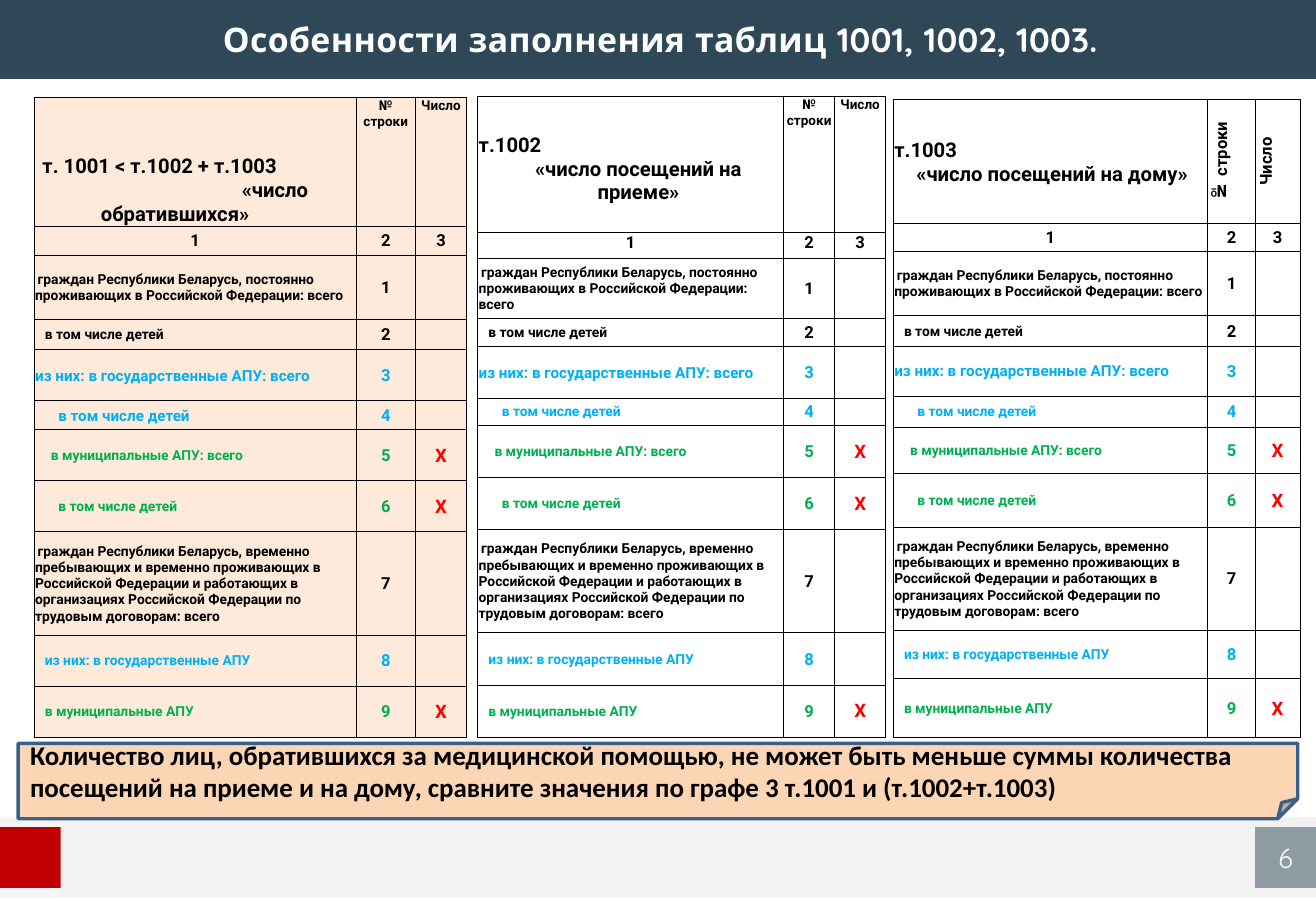
from lxml import etree
from pptx import Presentation, util as u
from pptx.dml.color import RGBColor
from pptx.enum import shapes, text
from pptx.oxml import ns

TITLE = "Особенности заполнения таблиц 1001, 1002, 1003."
NOTE = ("Количество лиц, обратившихся за медицинской помощью, не может быть меньше суммы "
        "количества посещений на приеме и на дому, сравните значения по графе 3 т.1001 "
        "и (т.1002+т.1003)")
PAGE_NUMBER = "6"
BLACK, WHITE, RED, BLUE, GREEN = "000000", "FFFFFF", "FF0000", "00B0F0", "00B050"
NAVY, PEACH = "2F4858", "FDEADA"

# label, left margin, first-line indent, colour, size, mark in the third column
ROWS = [
    ("граждан Республики Беларусь, постоянно проживающих в Российской Федерации: всего",
     0, 0.02, BLACK, 8.2, ""),
    ("в том числе детей", 0.08, 0, BLACK, 8.2, ""),
    ("из них: в государственные АПУ: всего", 0, 0, BLUE, 9, ""),
    ("в том числе детей", 0.19, 0, BLUE, 8.2, ""),
    ("в муниципальные АПУ: всего", 0.13, 0, GREEN, 8.2, "Х"),
    ("в том числе детей", 0.19, 0, GREEN, 8.2, "Х"),
    ("граждан Республики Беларусь, временно пребывающих и временно проживающих в "
     "Российской Федерации и работающих в организациях Российской Федерации по трудовым "
     "договорам: всего", 0, 0.02, BLACK, 8.2, ""),
    ("из них: в государственные АПУ", 0.08, 0, BLUE, 8.2, ""),
    ("в муниципальные АПУ", 0.08, 0, GREEN, 8.2, "Х"),
]

# headings: text, alignment, left margin, first-line indent
TABLES = [
    dict(left=0.28, top=0.8, fill=PEACH, columns=[2.65, 0.49, 0.42],
         heights=[1.06, 0.24, 0.53, 0.25, 0.42, 0.24, 0.42, 0.42, 0.85, 0.42, 0.42],
         headings=[("т. 1001 < т.1002 + т.1003", "l", 0.06, 0),
                   ("«число обратившихся»", "l", 0.54, 1.16)],
         anchor="b", margin_top=0.01, numbers_anchor="m", vertical=False, child_size=9),
    dict(left=3.93, top=0.79, fill=None, columns=[2.52, 0.42, 0.42],
         heights=[1.12, 0.22, 0.49, 0.23, 0.43, 0.22, 0.43, 0.43, 0.85, 0.43, 0.43],
         headings=[("т.1002", "l", 0, 0), ("«число посещений на приеме»", "c", 0.13, 0)],
         anchor="t", margin_top=0.31, numbers_anchor="t", vertical=False, child_size=8.2),
    dict(left=7.35, top=0.82, fill=None, columns=[2.59, 0.39, 0.37],
         heights=[1.02, 0.23, 0.53, 0.25, 0.41, 0.26, 0.38, 0.44, 0.85, 0.4, 0.48],
         headings=[("т.1003", "l", 0, 0), ("«число посещений на дому»", "c", 0.03, 0)],
         anchor="m", margin_top=0.01, numbers_anchor="m", vertical=True, child_size=8.2),
]
ALIGN = {"l": text.PP_ALIGN.LEFT, "c": text.PP_ALIGN.CENTER}
ANCHOR = {"t": text.MSO_ANCHOR.TOP, "m": text.MSO_ANCHOR.MIDDLE, "b": text.MSO_ANCHOR.BOTTOM}


def color(value):
    return RGBColor.from_string(value)


def write(paragraph, content, size=9.8, font="Roboto", fill=BLACK, bold=True, align="l",
          margin=0, indent=0, spacing=None):
    paragraph.alignment = ALIGN[align]
    properties = paragraph._p.get_or_add_pPr()
    properties.set("marL", str(u.Inches(margin)))
    properties.set("indent", str(u.Inches(indent)))
    run = paragraph.add_run()
    run.text = content
    run.font.size = u.Pt(size)
    run.font.name = font
    run.font.bold = bold
    run.font.color.rgb = color(fill)
    if spacing:
        run.font._element.set("spc", str(spacing))


def add_box(slide, kind, left, top, width, height, fill, line=None, opacity=100):
    shape = slide.shapes.add_shape(kind, *map(u.Inches, (left, top, width, height)))
    shape.shadow.inherit = False
    shape.fill.solid()
    shape.fill.fore_color.rgb = color(fill)
    if opacity < 100:
        solid = shape.element.spPr.find(ns.qn("a:solidFill"))
        etree.SubElement(solid[0], ns.qn("a:alpha"), val=str(opacity * 1000))
    if line:
        shape.line.color.rgb = color(line)
        shape.line.width = u.Pt(2)
    else:
        shape.line.fill.background()
    shape.text_frame.word_wrap = True
    shape.text_frame.vertical_anchor = ANCHOR["m"]
    return shape


def format_cell(cell, fill, anchor="m", margin_top=0.01):
    """Set margins, thin black borders and background of a cell."""
    cell.margin_left = cell.margin_right = u.Inches(0.01)
    cell.margin_top, cell.margin_bottom = u.Inches(margin_top), 0
    cell.vertical_anchor = ANCHOR[anchor]
    properties = cell._tc.get_or_add_tcPr()
    for side in ("lnL", "lnR", "lnT", "lnB"):
        border = etree.SubElement(properties, ns.qn("a:" + side), w=str(u.Pt(0.5)))
        solid = etree.SubElement(border, ns.qn("a:solidFill"))
        etree.SubElement(solid, ns.qn("a:srgbClr"), val=BLACK)
    if fill:
        cell.fill.solid()
        cell.fill.fore_color.rgb = color(fill)
    else:
        cell.fill.background()


def add_form(slide, form):
    """Draw one statistical form: heading row, column numbers, then ROWS."""
    columns, heights = form["columns"], form["heights"]
    frame = slide.shapes.add_table(
        len(heights), len(columns), u.Inches(form["left"]), u.Inches(form["top"]),
        u.Inches(sum(columns)), u.Inches(sum(heights)))
    table = frame.table
    table.first_row = table.horz_banding = False
    for column, width in zip(table.columns, columns):
        column.width = u.Inches(width)
    for row, height in zip(table.rows, heights):
        row.height = u.Inches(height)

    heading = table.cell(0, 0)
    format_cell(heading, form["fill"], form["anchor"], form["margin_top"])
    for index, (content, align, margin, indent) in enumerate(form["headings"]):
        frame_text = heading.text_frame
        paragraph = frame_text.add_paragraph() if index else frame_text.paragraphs[0]
        write(paragraph, content, size=12, align=align, margin=margin, indent=indent)

    vertical = form["vertical"]
    for index, content in enumerate(("№ строки", "Число"), 1):
        cell = table.cell(0, index)
        format_cell(cell, form["fill"], "m" if vertical else "t")
        if vertical:
            cell._tc.get_or_add_tcPr().set("vert", "vert270")
        write(cell.text_frame.paragraphs[0], content, size=9.8 if vertical else 8, align="c")

    for index in range(3):
        cell = table.cell(1, index)
        format_cell(cell, form["fill"], form["numbers_anchor"])
        write(cell.text_frame.paragraphs[0], str(index + 1), align="c")

    for number, (label, margin, indent, ink, size, mark) in enumerate(ROWS, 1):
        cells = [table.cell(number + 1, index) for index in range(3)]
        for cell in cells:
            format_cell(cell, form["fill"])
        label_line, number_line, mark_line = [cell.text_frame.paragraphs[0] for cell in cells]
        if number == 4:
            size = form["child_size"]
        write(label_line, label, size=size, fill=ink, margin=margin, indent=indent)
        write(number_line, str(number), fill=ink, align="c")
        if mark:
            write(mark_line, mark, size=11, fill=RED, align="c")
        else:
            etree.SubElement(mark_line._p, ns.qn("a:endParaRPr"), sz="800")


def main():
    presentation = Presentation()
    presentation.slide_width, presentation.slide_height = u.Inches(10.83), u.Inches(7.5)
    slide = presentation.slides.add_slide(presentation.slide_layouts[5])
    rectangle = shapes.MSO_SHAPE.RECTANGLE

    add_box(slide, rectangle, 0, 6.73, 10.83, 0.66, "F2F2F2")
    add_box(slide, rectangle, 0, 0, 10.83, 0.65, NAVY)
    add_box(slide, rectangle, 0, 6.73, 0.5, 0.66, WHITE, opacity=30)
    add_box(slide, rectangle, 0, 6.81, 0.5, 0.5, "C00000")
    page = add_box(slide, rectangle, 10.33, 6.81, 0.5, 0.5, NAVY, opacity=50)
    write(page.text_frame.paragraphs[0], PAGE_NUMBER, size=16, font="Quicksand",
          fill=WHITE, bold=False, align="c")

    title = slide.shapes.title
    page.element.addnext(title.element)
    title.left, title.top = u.Inches(0.65), 0
    title.width, title.height = u.Inches(9.57), u.Inches(0.65)
    frame = title.text_frame
    frame.margin_left = frame.margin_right = frame.margin_top = frame.margin_bottom = 0
    frame.vertical_anchor = ANCHOR["m"]
    frame.auto_size = text.MSO_AUTO_SIZE.NONE
    write(frame.paragraphs[0], TITLE, size=20, font="Quicksand", fill=WHITE, align="c",
          spacing=20)

    for form in TABLES:
        add_form(slide, form)

    note = add_box(slide, shapes.MSO_SHAPE.FOLDED_CORNER, 0.15, 6.12, 10.53, 0.62,
                   "FCD5B5", line="3A5F8C")
    fold = note.element.spPr.find(ns.qn("a:prstGeom")).get_or_add_avLst()
    etree.SubElement(fold, ns.qn("a:gd"), name="adj", fmla="val 26600")
    write(note.text_frame.paragraphs[0], NOTE, size=16, font="Calibri")
    presentation.save("out.pptx")


if __name__ == "__main__":
    main()
